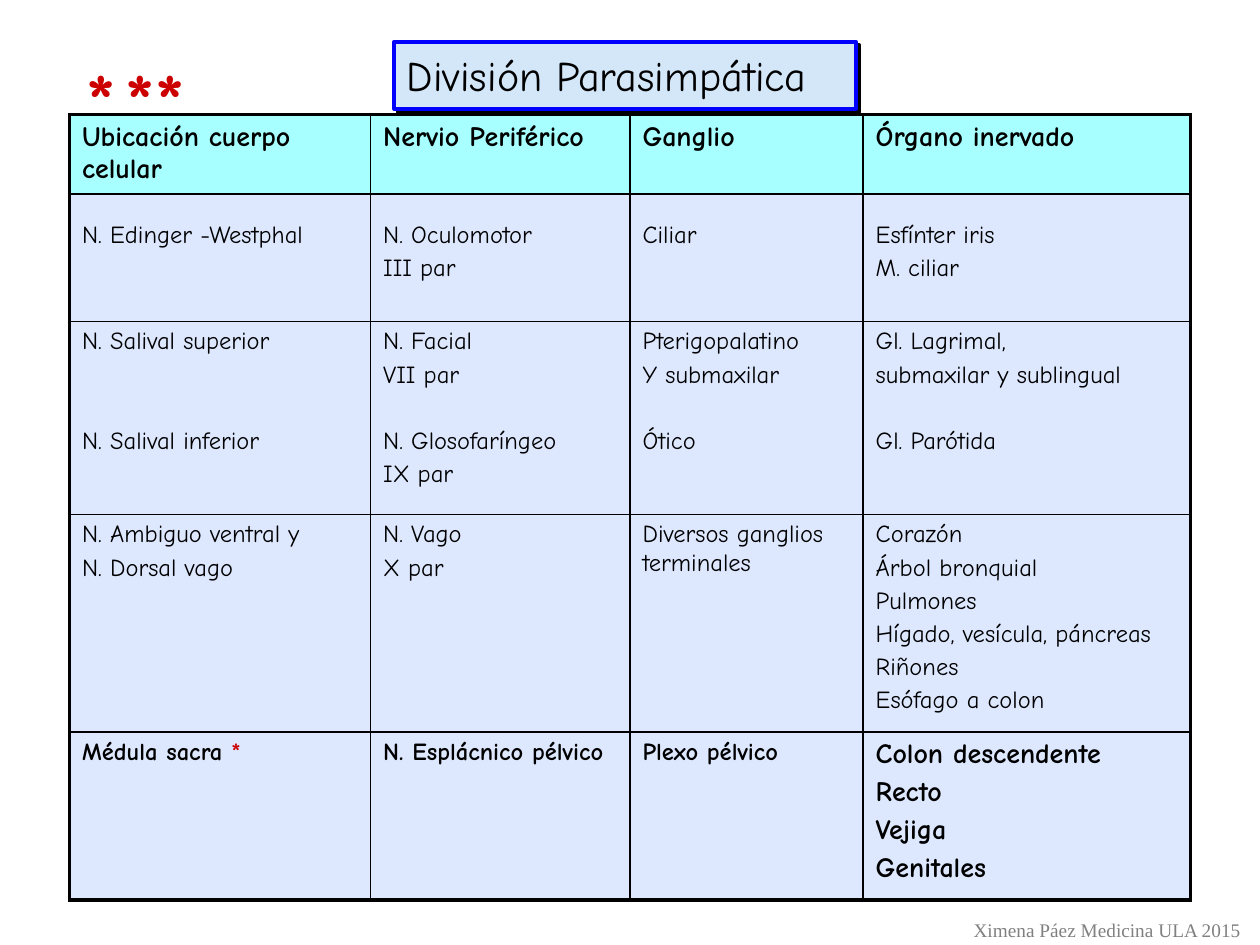
"""Build a slide that tabulates the parasympathetic division."""
from lxml import etree
from pptx import Presentation
from pptx import util as u
from pptx.dml.color import RGBColor
from pptx.enum import text
from pptx.oxml import ns

HUES = {"ink": "000000", "red": "CC0000", "head": "A7FFFF", "body": "DDE8FF",
        "title": "D3E7F9", "edge": "0000FF", "grey": "808080"}
FONT = "Comic Neue"
COLS = [6.07, 5.23, 4.7, 6.6]
ROWS = [1.6, 2.57, 3.89, 4.39, 3.38]
CELLS = [
    ["Ubicación cuerpo celular", "Nervio Periférico", "Ganglio", "Órgano inervado"],
    ["N. Edinger -Westphal", "N. Oculomotor\nIII par", "Ciliar", "Esfínter iris\nM. ciliar"],
    ["N. Salival superior\n\n\nN. Salival inferior",
     "N. Facial\nVII par\n\nN. Glosofaríngeo\nIX par",
     "Pterigopalatino\nY submaxilar\n\nÓtico",
     "Gl. Lagrimal,\nsubmaxilar y sublingual\n\nGl. Parótida"],
    ["N. Ambiguo ventral y\nN. Dorsal vago", "N. Vago\nX par",
     "Diversos ganglios terminales",
     "Corazón\nÁrbol bronquial\nPulmones\nHígado, vesícula, páncreas\nRiñones\nEsófago a colon"],
    ["Médula sacra *", "N. Esplácnico pélvico", "Plexo pélvico",
     "Colon descendente\nRecto\nVejiga\nGenitales"],
]


def write(para, words, size, hue="ink", bold=False, font=FONT):
    run = para.add_run()
    run.text = words
    run.font.size = u.Pt(size)
    run.font.bold = bold
    run.font.color.rgb = RGBColor.from_string(HUES[hue])
    run.font.name = font
    return run


def shade():
    effect = etree.Element(ns.qn("a:effectLst"))
    cast = etree.SubElement(effect, ns.qn("a:outerShdw"), dist="35560",
                            dir="2700000", algn="ctr", rotWithShape="0")
    etree.SubElement(cast, ns.qn("a:srgbClr"), val=HUES["ink"])
    return effect


deck = Presentation()
deck.slide_width, deck.slide_height = u.Cm(25.4), u.Cm(19.05)
slide = deck.slides.add_slide(deck.slide_layouts[5])

title = slide.shapes.title
title.left, title.top, title.width, title.height = map(u.Cm, (7.95, 0.84, 9.3, 1.35))
title.fill.solid()
title.fill.fore_color.rgb = RGBColor.from_string(HUES["title"])
title.line.color.rgb = RGBColor.from_string(HUES["edge"])
title.line.width = u.Pt(2.25)
title._element.spPr.append(shade())
frame = title.text_frame
frame.auto_size = text.MSO_AUTO_SIZE.NONE
frame.vertical_anchor = text.MSO_ANCHOR.MIDDLE
frame.paragraphs[0].alignment = text.PP_ALIGN.LEFT
write(frame.paragraphs[0], "División Parasimpática", 24)

table = slide.shapes.add_table(len(ROWS), len(COLS), u.Cm(1.4), u.Cm(2.31),
                               u.Cm(sum(COLS)), u.Cm(sum(ROWS))).table
table.first_row = table.horz_banding = False
for col, width in zip(table.columns, COLS):
    col.width = u.Cm(width)
for row, height in zip(table.rows, ROWS):
    row.height = u.Cm(height)

last_row, last_col = len(ROWS) - 1, len(COLS) - 1
for r, line in enumerate(CELLS):
    for c, words in enumerate(line):
        cell = table.cell(r, c)
        cell.margin_top = u.Cm(0.55 if r == 1 else 0.13)
        outer = {"L": c == 0, "R": c == last_col, "T": r == 0, "B": r == last_row}
        for side, thick in outer.items():
            edge = etree.SubElement(cell._tc.get_or_add_tcPr(), ns.qn("a:ln" + side),
                                    w=str(u.Pt(2.25 if thick else 1)))
            fill = etree.SubElement(edge, ns.qn("a:solidFill"))
            etree.SubElement(fill, ns.qn("a:srgbClr"), val=HUES["ink"])
        cell.fill.solid()
        cell.fill.fore_color.rgb = RGBColor.from_string(HUES["body" if r else "head"])

        size = 16 if r == 0 or (r, c) == (last_row, last_col) else 14
        bold = r in (0, last_row)
        para, gap = cell.text_frame.paragraphs[0], 0
        for part in words.split("\n"):
            if not part:
                gap += 1
                continue
            if para.runs:
                para = cell.text_frame.add_paragraph()
            para.space_before = u.Pt(0.2 * size + gap * 1.35 * size)
            gap = 0
            plain, star, _ = part.partition("*")
            write(para, plain, size, bold=bold)
            if star:
                write(para, star, size, "red", bold)

NOTES = [
    ("*", (1.5, 0.91, 1.32, 2.11), 44, "red", True, FONT),
    ("**", (2.29, 0.91, 2.16, 2.11), 44, "red", True, FONT),
    ("Ximena Páez Medicina ULA 2015", (19.35, 18.39, 5.94, 0.74), 11, "grey", False,
     "Times New Roman"),
]
for words, place, size, hue, bold, font in NOTES:
    frame = slide.shapes.add_textbox(*map(u.Cm, place)).text_frame
    frame.word_wrap = False
    para = frame.paragraphs[0]
    run = write(para, words, size, hue, bold, font)
    if hue == "red":
        run._r.get_or_add_rPr().insert(1, shade())
    else:
        para.alignment = text.PP_ALIGN.CENTER

deck.save("out.pptx")
